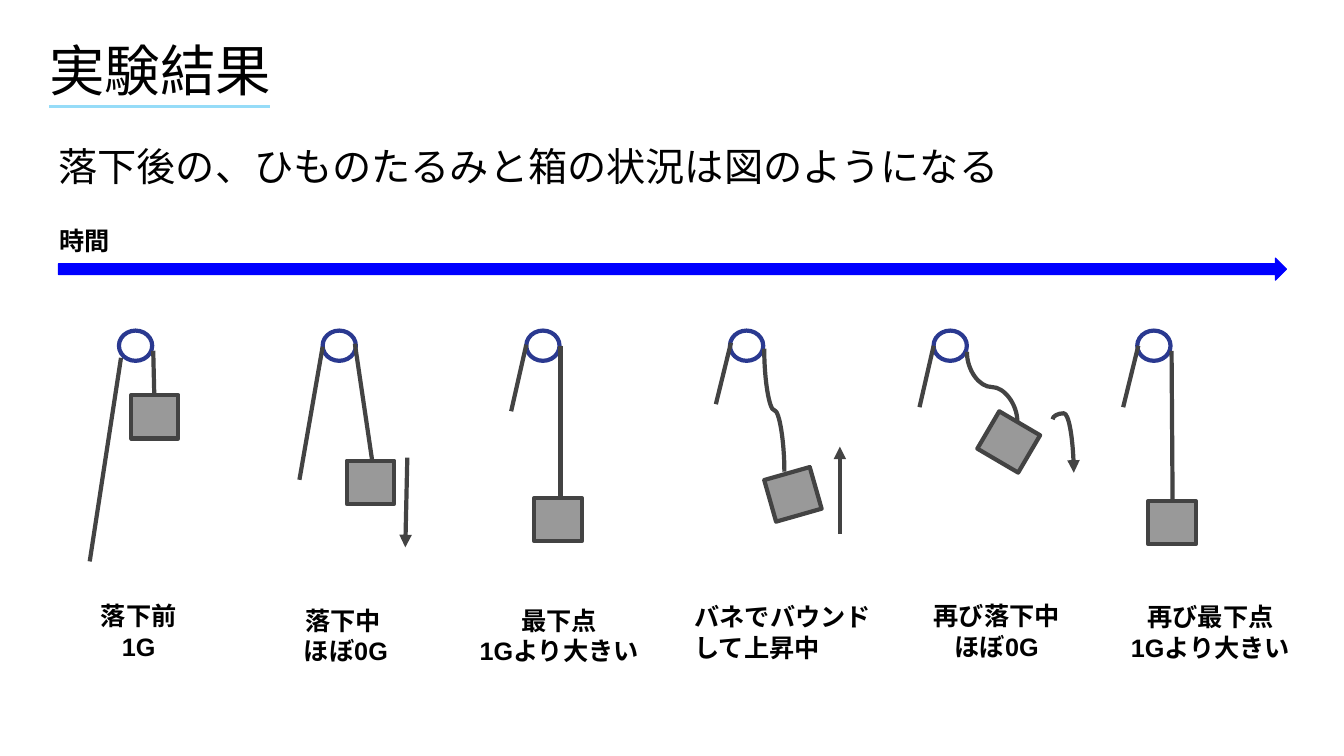
import dataclasses

import pptx
import pptx.dml.color
import pptx.enum.shapes
import pptx.enum.text
import pptx.oxml
import pptx.oxml.ns
import pptx.util
from pptx.util import Inches

SHAPE = pptx.enum.shapes.MSO_SHAPE
ALIGN = pptx.enum.text.PP_ALIGN
ANCHOR = pptx.enum.text.MSO_ANCHOR
qn = pptx.oxml.ns.qn


@dataclasses.dataclass(frozen=True)
class Theme:
    latin: str = "Arial"
    japanese: str = "Noto Sans CJK JP"
    text: str = "000000"
    underline: str = "96DCF8"
    time: str = "0000FF"
    string: str = "434343"
    wheel: str = "2A3990"
    wheel_fill: str = "FFFFFF"
    box_fill: str = "999999"
    title_size: float = 39.6
    body_size: float = 28
    label_size: float = 18
    stroke: float = 3


@dataclasses.dataclass(frozen=True)
class Scene:
    """One moment of the fall; lines and motion are (x1, y1, x2, y2)."""
    box: tuple
    lines: list
    caption: list
    caption_at: tuple
    turn: float = 0
    curve: tuple = ()
    motion: tuple = ()
    motion_curve: tuple = ()
    align: object = ALIGN.CENTER


def rgb(value):
    return pptx.dml.color.RGBColor.from_string(value)


def write(frame, lines, size, font, color, bold=False, align=ALIGN.LEFT,
          anchor=ANCHOR.TOP, margin=0.1, line_spacing=None, before=0):
    """Fill a text frame with one paragraph for each line."""
    frame.word_wrap = True
    frame.auto_size = pptx.enum.text.MSO_AUTO_SIZE.NONE
    frame.vertical_anchor = anchor
    frame.margin_left = frame.margin_right = Inches(0.1)
    frame.margin_top = frame.margin_bottom = Inches(margin)
    for index, line in enumerate(lines):
        para = frame.add_paragraph() if index else frame.paragraphs[0]
        para.alignment = align
        para.space_before = pptx.util.Pt(before)
        if line_spacing:
            para.line_spacing = line_spacing
        span = para.add_run()
        span.text = line
        span.font.size = pptx.util.Pt(size)
        span.font.bold = bold
        span.font.name = font
        span.font.color.rgb = rgb(color)
        east_asian = pptx.oxml.parse_xml(
            f'<a:ea {pptx.oxml.ns.nsdecls("a")} typeface="{Theme.japanese}"/>')
        span.font._element.find(qn("a:latin")).addnext(east_asian)


class Painter:
    def __init__(self, page, theme):
        self.page = page
        self.theme = theme

    def place(self, shape, left, top, width, height):
        shape.left, shape.top = Inches(left), Inches(top)
        shape.width, shape.height = Inches(width), Inches(height)

    def title(self, text, at):
        shape = self.page.shapes.title
        self.place(shape, *at)
        write(shape.text_frame, [text], self.theme.title_size, self.theme.japanese,
              self.theme.text, anchor=ANCHOR.MIDDLE, margin=0.05, line_spacing=0.9)

    def body(self, text, at):
        shape = self.page.placeholders[1]
        self.place(shape, *at)
        write(shape.text_frame, [text], self.theme.body_size, self.theme.japanese,
              self.theme.text, margin=0.05, line_spacing=0.9, before=10)
        properties = shape.text_frame.paragraphs[0]._p.get_or_add_pPr()
        properties.set("marL", "0")
        properties.set("indent", "0")
        properties.append(pptx.oxml.parse_xml(
            f'<a:buNone {pptx.oxml.ns.nsdecls("a")}/>'))

    def label(self, lines, at, **options):
        shape = self.page.shapes.add_textbox(*map(Inches, at))
        write(shape.text_frame, lines, self.theme.label_size, self.theme.latin,
              self.theme.text, bold=True, **options)

    def shape(self, kind, at, fill, line, width=Theme.stroke, turn=0):
        shape = self.page.shapes.add_shape(kind, *map(Inches, at))
        shape.shadow.inherit = False
        shape.rotation = turn
        shape.fill.solid()
        shape.fill.fore_color.rgb = rgb(fill)
        self.stroke(shape, line, width)

    def stroke(self, shape, color, width, arrow=False):
        shape.line.color.rgb = rgb(color)
        shape.line.width = pptx.util.Pt(width)
        if arrow:
            shape.line._get_or_add_ln().append(pptx.oxml.parse_xml(
                f'<a:tailEnd {pptx.oxml.ns.nsdecls("a")} type="triangle"/>'))

    def line(self, ends, color=Theme.string, width=Theme.stroke, arrow=False):
        line = self.page.shapes.add_connector(
            pptx.enum.shapes.MSO_CONNECTOR.STRAIGHT, *map(Inches, ends))
        self.stroke(line, color, width, arrow)
        line._element.spPr.append(pptx.oxml.parse_xml(
            f'<a:effectLst {pptx.oxml.ns.nsdecls("a")}/>'))

    def curve(self, points, arrow=False):
        """Draw cubic curves: a start, then three points for each curve."""
        places = [(Inches(x), Inches(y)) for x, y in points]
        builder = self.page.shapes.build_freeform(*places[0])
        builder.add_line_segments(places[1:], close=False)
        shape = builder.convert_to_shape()
        segments = list(shape._element.iter(qn("a:lnTo")))
        for first in range(0, len(segments), 3):
            cubic = pptx.oxml.parse_xml(
                f'<a:cubicBezTo {pptx.oxml.ns.nsdecls("a")}/>')
            segments[first].addprevious(cubic)
            for segment in segments[first:first + 3]:
                cubic.append(segment[0])
                segment.getparent().remove(segment)
        shape.shadow.inherit = False
        shape.fill.background()
        self.stroke(shape, self.theme.string, self.theme.stroke, arrow)

    def scene(self, scene, wheel_left):
        self.shape(SHAPE.OVAL, (wheel_left, 3.28, 0.33, 0.3),
                   self.theme.wheel_fill, self.theme.wheel)
        for ends in scene.lines:
            self.line(ends)
        self.shape(SHAPE.RECTANGLE, (*scene.box, 0.47, 0.43),
                   self.theme.box_fill, self.theme.string, turn=scene.turn)
        if scene.curve:
            self.curve(scene.curve)
        if scene.motion:
            self.line(scene.motion, arrow=True)
        if scene.motion_curve:
            self.curve(scene.motion_curve, arrow=True)
        self.label(scene.caption, (*scene.caption_at, 0.81), align=scene.align)


SCENES = [
    Scene((1.3, 3.92), [(1.52, 3.48, 1.53, 3.91), (1.2, 3.55, 0.89, 5.57)],
          ["落下前", "1G"], (0.78, 5.86, 1.19)),
    Scene((3.44, 4.57), [(3.52, 3.41, 3.69, 4.56), (3.2, 3.44, 2.97, 4.76)],
          ["落下中 　", "ほぼ0G　"], (2.91, 5.9, 1.29),
          motion=(4.04, 4.54, 4.02, 5.43)),
    Scene((5.3, 4.94), [(5.22, 3.42, 5.07, 4.08), (5.56, 3.43, 5.56, 4.92)],
          ["最下点", "1Gより大きい"], (4.5, 5.9, 2.09)),
    Scene((7.63, 4.69), [(7.25, 3.4, 7.1, 4.01)],
          ["バネでバウンド", "して上昇中"], (6.79, 5.87, 2.17), turn=344.1,
          curve=((7.58, 3.46), (7.58, 3.77), (7.63, 4.07), (7.68, 4.07),
                 (7.73, 4.07), (7.78, 4.38), (7.78, 4.68)),
          motion=(8.33, 5.3, 8.33, 4.43), align=ALIGN.LEFT),
    Scene((9.77, 4.17), [(9.26, 3.43, 9.12, 4.04)],
          ["再び落下中", "ほぼ0G"], (9.11, 5.86, 1.55), turn=30.4,
          curve=((9.59, 3.49), (9.59, 3.67), (9.71, 3.84), (9.84, 3.84),
                 (9.96, 3.84), (10.09, 4.01), (10.09, 4.18)),
          motion_curve=((10.44, 4.16), (10.44, 4.13), (10.49, 4.1), (10.55, 4.1),
                        (10.6, 4.1), (10.65, 4.4), (10.65, 4.69))),
    Scene((11.39, 4.97), [(11.29, 3.43, 11.14, 4.04), (11.62, 3.48, 11.63, 4.97)],
          ["再び最下点", "1Gより大きい"], (10.96, 5.87, 2.09)),
]


def main():
    deck = pptx.Presentation()
    deck.slide_width, deck.slide_height = Inches(13.33), Inches(7.5)
    theme = Theme()
    painter = Painter(deck.slides.add_slide(deck.slide_layouts[1]), theme)
    painter.title("実験結果", (0.39, 0.39, 5.4, 0.67))
    painter.body("落下後の、ひものたるみと箱の状況は図のようになる", (0.48, 1.41, 11.45, 0.54))
    painter.line((0.49, 1.06, 2.68, 1.06), theme.underline, 2.25)
    painter.shape(SHAPE.RIGHT_ARROW, (0.58, 2.56, 12.18, 0.22),
                  theme.time, theme.time, 0.75)
    painter.label(["時間"], (0.49, 2.14, 0.8, 0.5), anchor=ANCHOR.MIDDLE)
    for index, scene in enumerate(SCENES):
        painter.scene(scene, 1.18 + 2.02 * index)
    deck.save("out.pptx")


if __name__ == "__main__":
    main()
